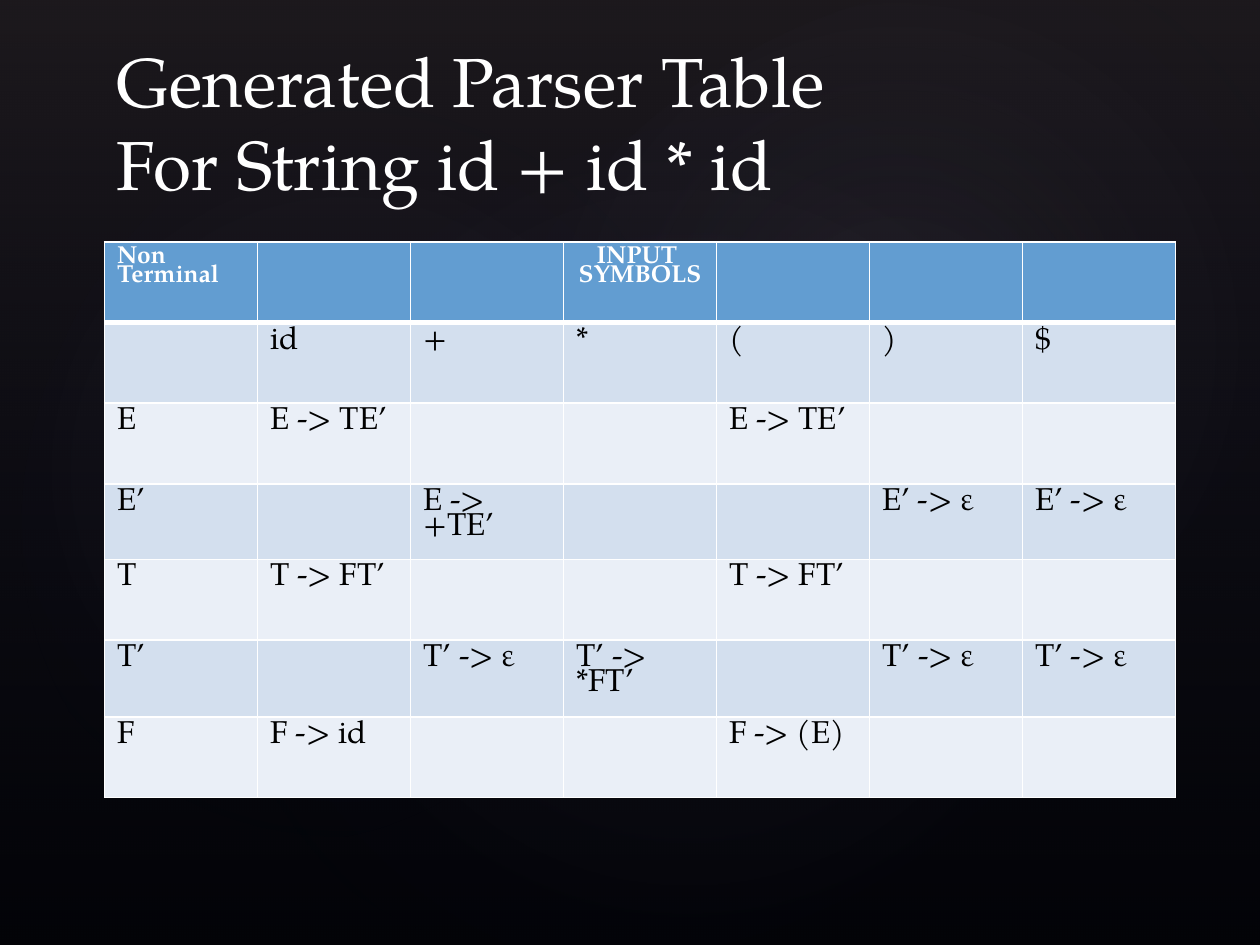
import pptx
import pptx.dml.color
import pptx.enum.shapes
import pptx.enum.text
import pptx.oxml
import pptx.oxml.ns
import pptx.util
from pptx.util import Inches

FONT = "TeX Gyre Pagella"
WHITE = "FFFFFF"
NAMESPACE = pptx.oxml.ns.nsdecls("a")


def rgb(value):
    return pptx.dml.color.RGBColor.from_string(value)


def add_glow(preset, frame, rotation, stops, direction):
    """Add a borderless shape filled with (position %, colour, opacity %) stops."""
    glow = slide.shapes.add_shape(preset, *[Inches(length) for length in frame])
    glow.rotation = rotation
    glow.shadow.inherit = False
    glow.line.fill.background()
    stop_xml = "".join(
        f'<a:gs pos="{position * 1000}"><a:srgbClr val="{color}">'
        f'<a:alpha val="{opacity * 1000}"/></a:srgbClr></a:gs>'
        for position, color, opacity in stops)
    gradient = pptx.oxml.parse_xml(
        f'<a:gradFill {NAMESPACE} rotWithShape="1"><a:gsLst>{stop_xml}</a:gsLst>{direction}</a:gradFill>')
    glow._element.spPr.find(pptx.oxml.ns.qn("a:prstGeom")).addnext(gradient)


presentation = pptx.Presentation()
presentation.slide_width = Inches(10)
presentation.slide_height = Inches(7.5)
slide = presentation.slides.add_slide(presentation.slide_layouts[6])
slide.background.fill.solid()
slide.background.fill.fore_color.rgb = rgb("000000")

# Backdrop
presets = pptx.enum.shapes.MSO_SHAPE
add_glow(presets.RECTANGLE, (0, 0, 10, 7.5), 0,
         [(0, "504652", 36), (100, "242852", 10)], '<a:lin ang="5400000" scaled="0"/>')
radial = ('<a:path path="circle"><a:fillToRect l="50000" t="50000" '
          'r="50000" b="50000"/></a:path>')
for frame, rotation, opacity in [
    ((1.5, 1.14, 7.92, 6.24), 328.7, 7),
    ((-0.3, 1.28, 6.06, 4.9), 294.3, 8),
    ((3.58, 0.13, 7.09, 5.2), 328.7, 8),
]:
    add_glow(presets.OVAL, frame, rotation,
             [(0, "C4BCC6", opacity), (58, "242852", 0)], radial)

# Parser table
rows = [
    ["Non Terminal", "", "", "INPUT \nSYMBOLS", "", "", ""],
    ["", "id", "+", "*", "(", ")", "$"],
    ["E", "E -> TE’", "", "", "E -> TE’", "", ""],
    ["E’", "", "E -> +TE’", "", "", "E’ -> ε", "E’ -> ε"],
    ["T", "T -> FT’", "", "", "T -> FT’", "", ""],
    ["T’", "", "T’ -> ε", "T’ -> *FT’", "", "T’ -> ε", "T’ -> ε"],
    ["F", "F -> id", "", "", "F -> (E)", "", ""],
]
row_heights = [0.64, 0.64, 0.64, 0.6, 0.64, 0.61, 0.64]
parser_table = slide.shapes.add_table(
    len(rows), len(rows[0]), Inches(0.83), Inches(1.92), Inches(8.5), Inches(sum(row_heights))).table
for row, height in zip(parser_table.rows, row_heights):
    row.height = Inches(height)

for row_index, texts in enumerate(rows):
    is_header = row_index == 0
    band = "629DD1" if is_header else ("EAEFF7", "D3DFEE")[row_index % 2]
    for column_index, text in enumerate(texts):
        cell = parser_table.cell(row_index, column_index)
        cell_properties = cell._tc.get_or_add_tcPr()
        for side in ("lnL", "lnR", "lnT", "lnB"):
            is_header_rule = (row_index, side) in [(0, "lnB"), (1, "lnT")]
            width = pptx.util.Pt(3 if is_header_rule else 1)
            cell_properties.append(pptx.oxml.parse_xml(
                f'<a:{side} {NAMESPACE} w="{width}"><a:solidFill>'
                f'<a:srgbClr val="{WHITE}"/></a:solidFill></a:{side}>'))
        cell.fill.solid()
        cell.fill.fore_color.rgb = rgb(band)
        cell.text_frame.text = text
        for paragraph in cell.text_frame.paragraphs:
            paragraph.line_spacing = 0.8
            if text.startswith("INPUT"):
                paragraph.alignment = pptx.enum.text.PP_ALIGN.CENTER
            paragraph.font.size = pptx.util.Pt(14 if is_header else 18)
            for run in paragraph.runs:
                run.font.name = FONT
                run.font.size = pptx.util.Pt(14 if is_header else 18)
                run.font.bold = is_header
                run.font.color.rgb = rgb(WHITE if is_header else "000000")

# Title
title = slide.shapes.add_textbox(Inches(0.83), Inches(0.26), Inches(8.25), Inches(1.41)).text_frame
title.word_wrap = True
title.vertical_anchor = pptx.enum.text.MSO_ANCHOR.BOTTOM
title.paragraphs[0].text = "Generated Parser Table\vFor String id + id * id"
for run in title.paragraphs[0].runs:
    run.font.name = FONT
    run.font.size = pptx.util.Pt(39.6)
    run.font.color.rgb = rgb(WHITE)

presentation.save("out.pptx")
